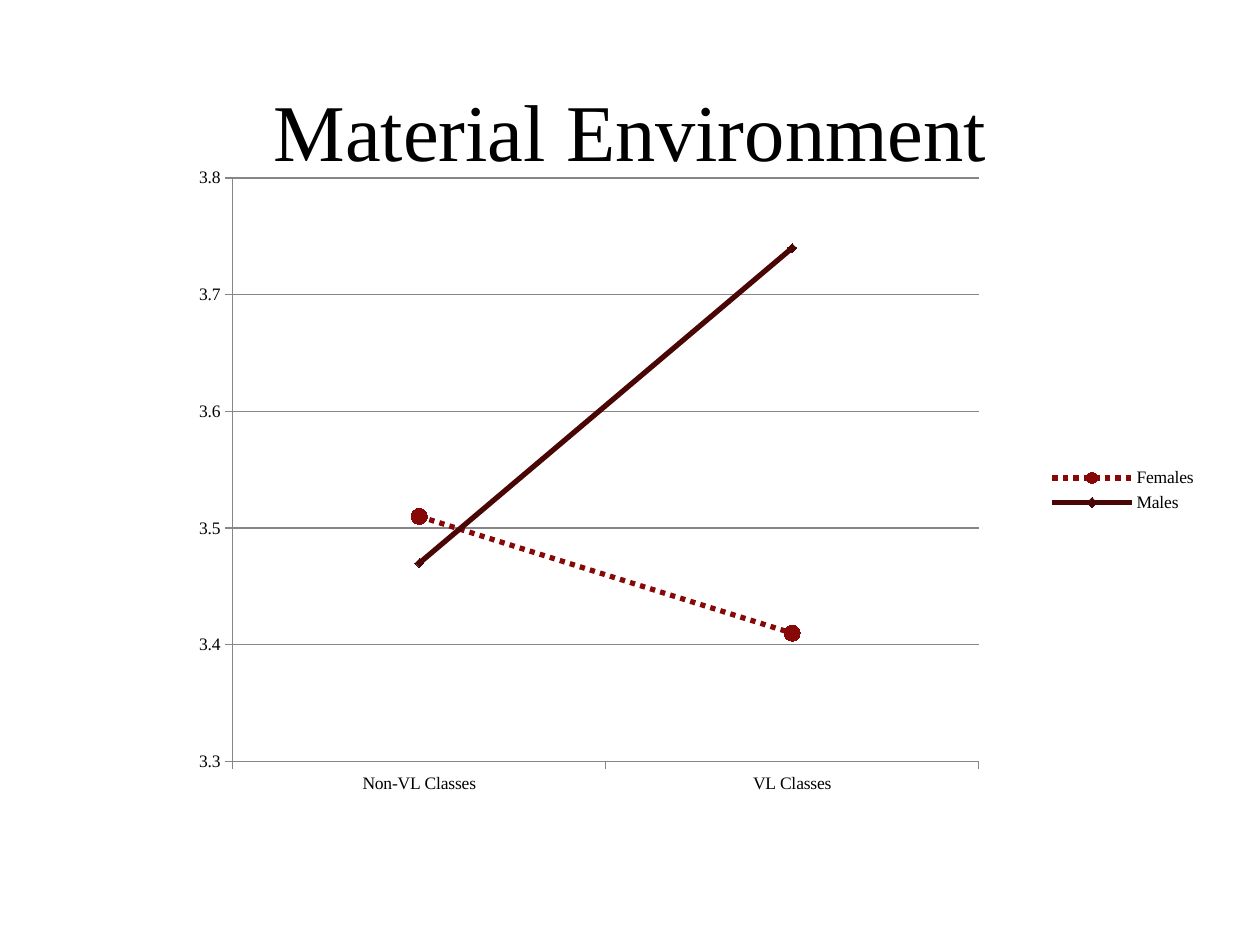
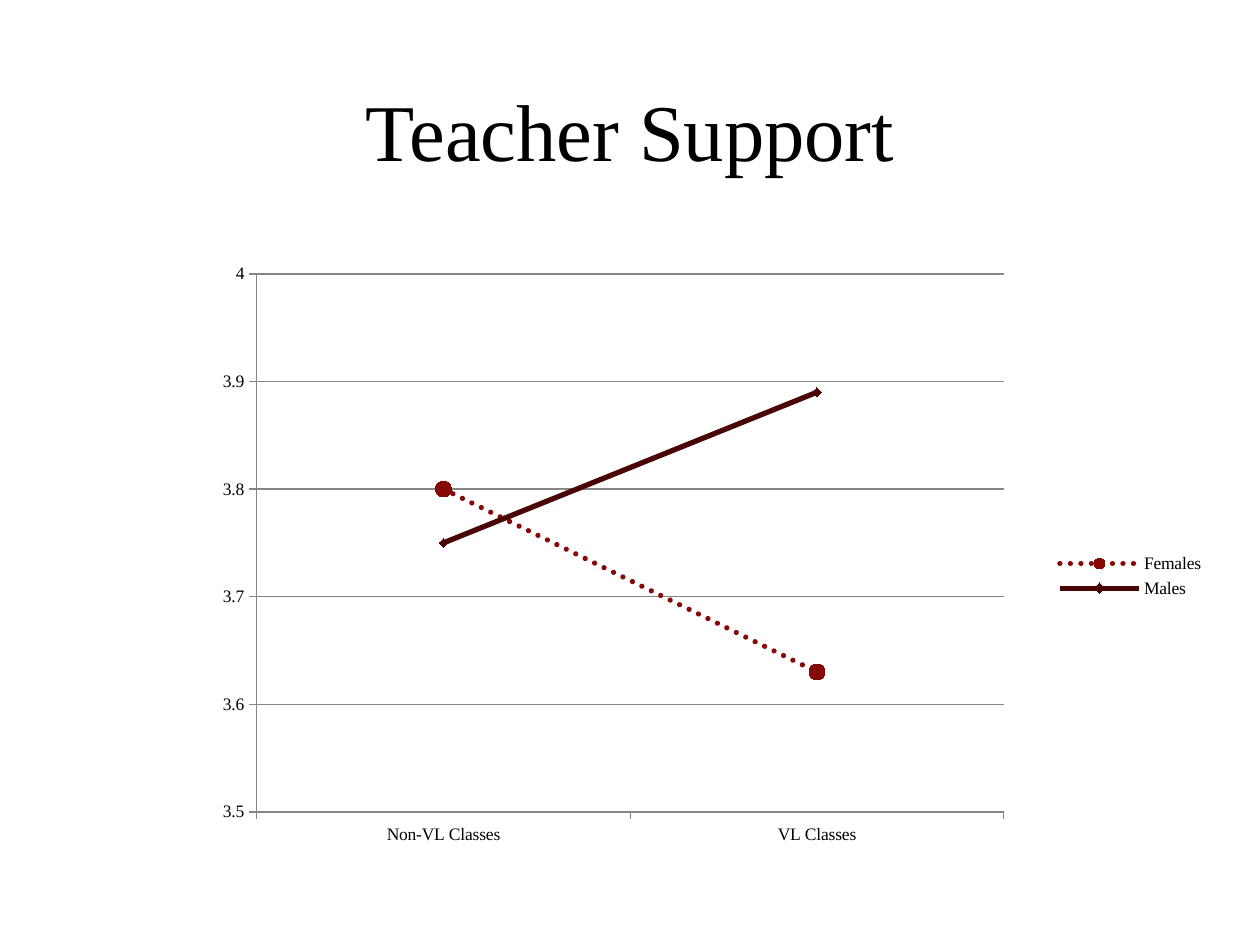
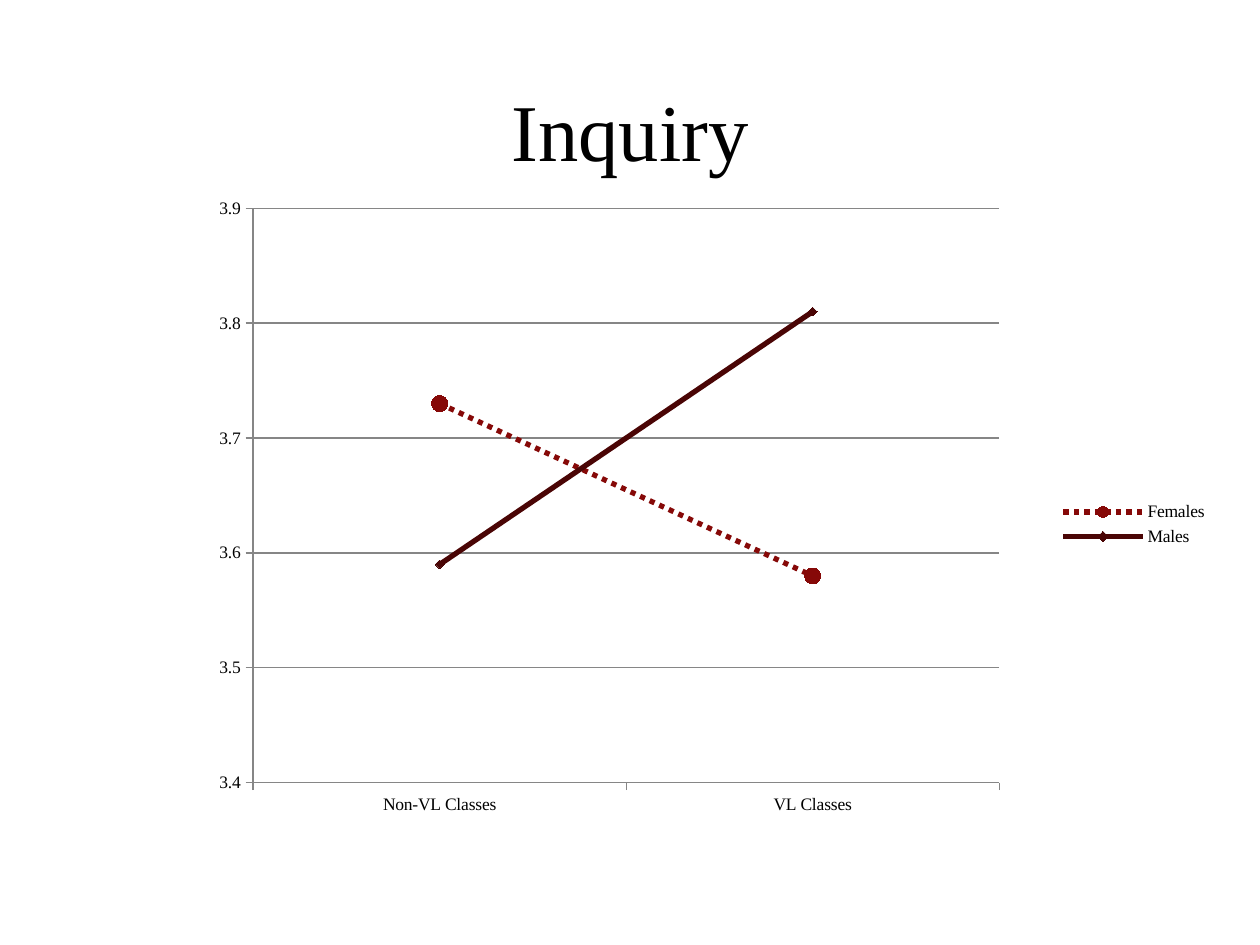
from pptx import Presentation
from pptx.chart.data import CategoryChartData
from pptx.dml.color import RGBColor
from pptx.enum.chart import XL_CHART_TYPE as ChartType
from pptx.enum.chart import XL_LEGEND_POSITION as LegendPosition
from pptx.enum.chart import XL_MARKER_STYLE as Marker
from pptx.enum.chart import XL_TICK_MARK as TickMark
from pptx.enum.dml import MSO_LINE as Dash
from pptx.enum.text import MSO_ANCHOR as Anchor
from pptx.enum.text import MSO_AUTO_SIZE as AutoSize
from pptx.enum.text import PP_ALIGN as Align
from pptx.oxml import parse_xml
from pptx.oxml.ns import nsdecls, qn
from pptx.util import Cm, Pt

COLORS = {
    "background": "FFFFFF",
    "text": "000000",
    "axis": "868686",
    "females": "860908",
    "males": "4A0505",
}
FONT = "Times New Roman"
TITLE_ONLY = 5
CATEGORIES = ["Non-VL Classes", "VL Classes"]
TITLE_BOX = (2.54, 1.4, 20.32, 2.41)

# Boxes are left, top, width, height in cm; plots are fractions of their chart.
CHART_SLIDES = [
    {
        "title": "Material Environment",
        "females": (3.51, 3.41),
        "males": (3.47, 3.74),
        "scale": (3.3, 3.8),
        "box": (0.97, 2.39, 23.42, 14.99),
        "plot": (0.159, 0.08, 0.642, 0.785),
    },
    {
        "title": "Teacher Support",
        "females": (3.8, 3.63),
        "males": (3.75, 3.89),
        "scale": (3.5, 4),
        "box": (1.65, 4.83, 22.89, 13.56),
        "plot": (0.154, 0.051, 0.658, 0.8),
        "round_dots": True,
    },
    {
        "title": "Inquiry",
        "females": (3.73, 3.58),
        "males": (3.59, 3.81),
        "scale": (3.4, 3.9),
        "box": (1.47, 3.33, 23.14, 14.48),
        "plot": (0.157, 0.06, 0.65, 0.8),
    },
]


def color(name):
    return RGBColor.from_string(COLORS[name])


def format_font(font, size, color_name="text"):
    font.name = FONT
    font.size = Pt(size)
    font.color.rgb = color(color_name)


def write_text(shape, text, size=46, align=Align.CENTER, anchor=Anchor.MIDDLE):
    frame = shape.text_frame
    frame.word_wrap = True
    frame.auto_size = AutoSize.NONE
    frame.vertical_anchor = anchor
    paragraph = frame.paragraphs[0]
    paragraph.alignment = align
    run = paragraph.add_run()
    run.text = text
    format_font(run.font, size)


def add_title(slide, text):
    title = slide.shapes.title
    title.left, title.top, title.width, title.height = map(Cm, TITLE_BOX)
    write_text(title, text)


def format_line(line, color_name, width):
    line.color.rgb = color(color_name)
    line.width = Pt(width)


def format_series(series, color_name, marker_style, marker_size):
    series.smooth = False
    format_line(series.format.line, color_name, 3)
    marker = series.marker
    marker.style = marker_style
    marker.size = marker_size
    marker.format.fill.solid()
    marker.format.fill.fore_color.rgb = color(color_name)
    format_line(marker.format.line, color_name, 0.75)


def dot_line(series, round_dots):
    series.format.line.dash_style = Dash.ROUND_DOT
    if round_dots:
        line = series._element.find(qn("c:spPr")).find(qn("a:ln"))
        line.set("cap", "rnd")


def format_axes(chart, scale):
    for axis in (chart.category_axis, chart.value_axis):
        axis.major_tick_mark = TickMark.OUTSIDE
        axis.minor_tick_mark = TickMark.NONE
        format_line(axis.format.line, "axis", 0.75)
    value_axis = chart.value_axis
    value_axis.minimum_scale, value_axis.maximum_scale = scale
    value_axis.major_unit = 0.1
    value_axis.has_major_gridlines = True
    format_line(value_axis.major_gridlines.format.line, "axis", 0.75)
    value_axis.tick_labels.number_format = "General"
    value_axis.tick_labels.number_format_is_linked = False


def place_plot(chart, plot):
    """Fix the inner plot area at x, y, width and height."""
    plot_area = chart._chartSpace.chart.plotArea
    for layout in plot_area.findall(qn("c:layout")):
        plot_area.remove(layout)
    sizes = "".join(f'<c:{key} val="{value}"/>' for key, value in zip("xywh", plot))
    plot_area.insert(0, parse_xml(
        f'<c:layout {nsdecls("c")}><c:manualLayout><c:layoutTarget val="inner"/>'
        '<c:xMode val="edge"/><c:yMode val="edge"/>'
        f"{sizes}</c:manualLayout></c:layout>"
    ))


def add_line_chart(slide, females, males, scale, box, plot, round_dots=False):
    data = CategoryChartData()
    data.categories = CATEGORIES
    data.add_series("Females", females)
    data.add_series("Males", males)
    frame = slide.shapes.add_chart(ChartType.LINE_MARKERS, *map(Cm, box), data)
    chart = frame.chart
    chart.has_title = False
    format_font(chart.font, 10)
    chart.has_legend = True
    chart.legend.position = LegendPosition.RIGHT
    chart.legend.include_in_layout = False
    format_axes(chart, scale)
    place_plot(chart, plot)

    line_plot = chart.plots[0]
    line_plot.vary_by_categories = False
    female_series, male_series = line_plot.series
    format_series(female_series, "females", Marker.CIRCLE, 9)
    dot_line(female_series, round_dots)
    format_series(male_series, "males", Marker.DIAMOND, 5)


def add_chart_slide(presentation, title, **chart_options):
    slide = presentation.slides.add_slide(presentation.slide_layouts[TITLE_ONLY])
    add_title(slide, title)
    add_line_chart(slide, **chart_options)


def main():
    presentation = Presentation()
    presentation.slide_width = Cm(25.4)
    presentation.slide_height = Cm(19.05)
    background = presentation.slide_master.background.fill
    background.solid()
    background.fore_color.rgb = color("background")
    for chart_slide in CHART_SLIDES:
        add_chart_slide(presentation, **chart_slide)
    presentation.save("out.pptx")


if __name__ == "__main__":
    main()
